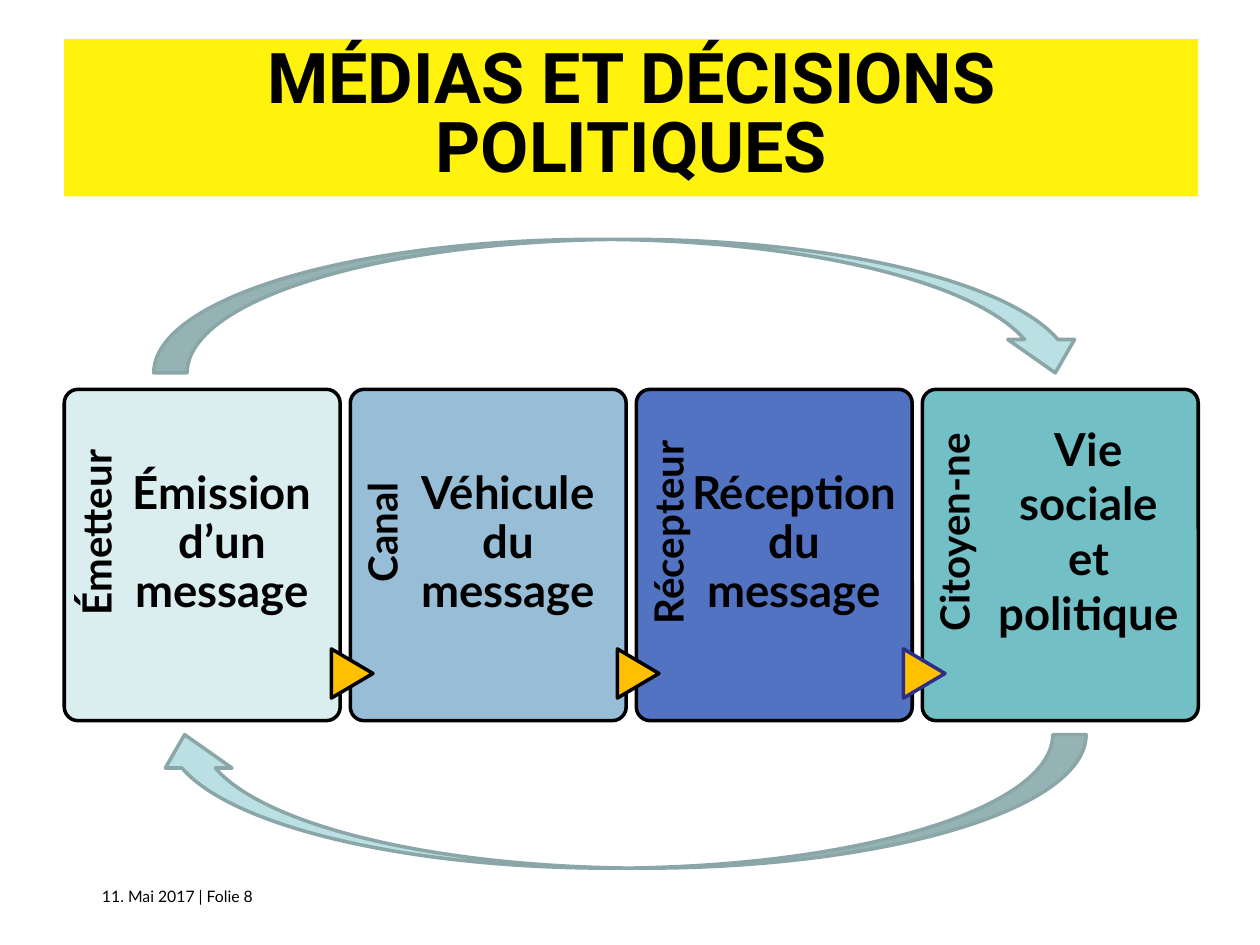
from pptx import Presentation
from pptx.dml.color import RGBColor
from pptx.enum.shapes import MSO_SHAPE
from pptx.enum.text import MSO_ANCHOR, PP_ALIGN
from pptx.util import Inches, Pt

BLACK = RGBColor(0x00, 0x00, 0x00)
YELLOW = RGBColor(0xFF, 0xF2, 0x0D)
AMBER = RGBColor(0xFF, 0xC0, 0x00)
NAVY = RGBColor(0x2D, 0x2D, 0x8A)
AQUA = RGBColor(0xBB, 0xE0, 0xE3)
GREY = RGBColor(0x8A, 0xA6, 0xA8)
MIST = RGBColor(0xDA, 0xED, 0xEF)
SKY = RGBColor(0x98, 0xBD, 0xD6)
BLUE = RGBColor(0x52, 0x73, 0xC1)
TEAL = RGBColor(0x72, 0xBF, 0xC5)

LEFT, TOP, STEP = 0.51, 3.09, 2.27
WIDE, HIGH = 2.19, 2.63
STAGES = [
    ("Émetteur", "Émission d’un message", MIST),
    ("Canal", "Véhicule du message", SKY),
    ("Récepteur", "Réception du message", BLUE),
    ("Citoyen-ne", "Vie sociale et politique", TEAL),
]


def place(item, box):
    item.left, item.top, item.width, item.height = map(Inches, box)


def write(frame, text, size, font="Lato", bold=True, space=None,
          align=PP_ALIGN.CENTER, inset=(0, 0, 0, 0), wrap=True):
    frame.word_wrap = wrap
    (frame.margin_left, frame.margin_top,
     frame.margin_right, frame.margin_bottom) = map(Inches, inset)
    para = frame.paragraphs[0]
    para.alignment = align
    para.line_spacing = space
    run = para.add_run()
    run.text = text
    run.font.name = font
    run.font.size = Pt(size)
    run.font.bold = bold
    run.font.color.rgb = BLACK


def add_text(slide, box, text, size, turn=0, **style):
    item = slide.shapes.add_textbox(*map(Inches, box))
    item.rotation = turn
    write(item.text_frame, text, size, **style)


def add_form(slide, kind, box, fill, line=BLACK, turn=0):
    form = slide.shapes.add_shape(kind, *map(Inches, box))
    form.shadow.inherit = False
    form.fill.solid()
    form.fill.fore_color.rgb = fill
    form.line.color.rgb = line
    form.line.width = Pt(2)
    form.rotation = turn
    return form


def add_title(slide, text):
    title = slide.shapes.title
    place(title, (LEFT, 0.31, 9, 1.25))
    title.fill.solid()
    title.fill.fore_color.rgb = YELLOW
    title.text_frame.vertical_anchor = MSO_ANCHOR.MIDDLE
    write(title.text_frame, text, 40, font="Roboto", space=Pt(39),
          inset=(0.31, 0.1, 0.31, 0.1))


def add_stage(slide, index, label, text, fill):
    left = LEFT + index * STEP
    last = index == len(STAGES) - 1
    card = add_form(slide, MSO_SHAPE.ROUNDED_RECTANGLE,
                    (left, TOP, WIDE, HIGH), fill)
    card.adjustments[0] = 0.05
    add_text(slide, (left - 0.85, 3.95, 2.16, 0.44), label, 23, turn=270,
             space=0.9, inset=(0, 0.09, 0.11, 0))
    if index:
        add_form(slide, MSO_SHAPE.FLOWCHART_EXTRACT,
                 (left - 0.18, 5.18, 0.39, 0.33), AMBER,
                 NAVY if last else BLACK, 90)
    if last:
        add_text(slide, (left + 0.48, 2.86, 1.68, 2.29), text, 26,
                 inset=(0.1, 0.48, 0.1, 0.05))
    else:
        add_text(slide, (left + 0.44, TOP, 1.63, HIGH), text, 26,
                 space=0.9, inset=(0, 0.64, 0, 0))


def main():
    deck = Presentation()
    deck.slide_width, deck.slide_height = Inches(10), Inches(7.5)
    slide = deck.slides.add_slide(deck.slide_layouts[5])
    add_title(slide, "MÉDIAS ET DÉCISIONS POLITIQUES")
    add_text(slide, (0.81, 7.04, 1.57, 0.15), "11. Mai 2017 | Folie 8", 9,
             bold=False, align=PP_ALIGN.LEFT, wrap=False)
    for index, stage in enumerate(STAGES):
        add_stage(slide, index, *stage)
    for left, top, turn in ((1.22, 1.9, 0), (1.2, 5.83, 180)):
        add_form(slide, MSO_SHAPE.CURVED_DOWN_ARROW,
                 (left, top, 7.42, 1.06), AQUA, GREY, turn)
    deck.save("out.pptx")


if __name__ == "__main__":
    main()
